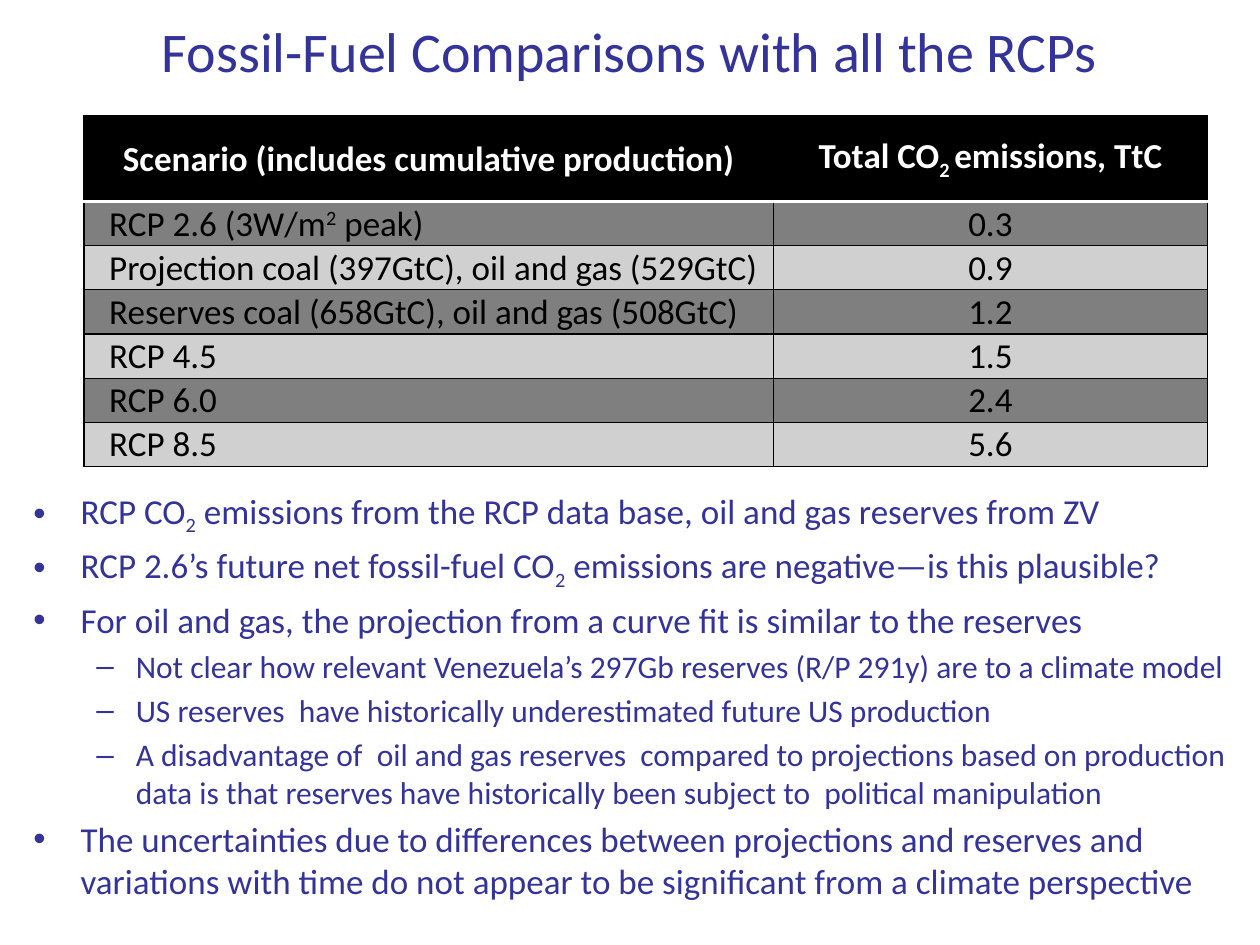
"""Builds a slide comparing fossil-fuel emissions across the RCP scenarios."""
from lxml import etree
from pptx import Presentation
from pptx.dml.color import RGBColor
from pptx.enum import text
from pptx.oxml import ns
from pptx.util import Pt

NAVY = RGBColor(0x33, 0x33, 0x99)
BLACK = RGBColor(0, 0, 0)
WHITE = RGBColor(0xFF, 0xFF, 0xFF)
DARK = RGBColor(0x7F, 0x7F, 0x7F)
LIGHT = RGBColor(0xD0, 0xD0, 0xD0)


def write(para, wording, size, color, bold=False, shift=-25):
    """Write wording into para, raising or lowering the parts between bars."""
    para.font.name, para.font.size, para.font.bold = "Calibri", Pt(size), bold
    para.font.color.rgb = color
    for index, part in enumerate(wording.split("|")):
        span = para.add_run()
        span.text = part
        if index % 2:
            span.font._element.set("baseline", str(shift * 1000))


def add_border(cell, side, color, width):
    """Draw one side of a cell."""
    line = etree.SubElement(cell._tc.get_or_add_tcPr(), ns.qn(f"a:ln{side}"), w=str(Pt(width)))
    fill = etree.SubElement(line, ns.qn("a:solidFill"))
    etree.SubElement(fill, ns.qn("a:srgbClr"), val=str(color))


deck = Presentation()
deck.slide_width, deck.slide_height = Pt(720), Pt(540)
page = deck.slides.add_slide(deck.slide_layouts[6])

title = page.shapes.add_textbox(Pt(36), Pt(9.5), Pt(648), Pt(38)).text_frame
title.word_wrap = True
title.vertical_anchor = text.MSO_ANCHOR.MIDDLE
title.paragraphs[0].alignment = text.PP_ALIGN.CENTER
write(title.paragraphs[0], "Fossil-Fuel Comparisons with all the RCPs", 32, NAVY)

scenarios = [
    ("Scenario (includes cumulative production)", "Total CO|2 |emissions, TtC"),
    ("RCP 2.6 (3W/m|2| peak)", "0.3"),
    ("Projection coal (397GtC), oil and gas (529GtC)", "0.9"),
    ("Reserves coal (658GtC), oil and gas (508GtC)", "1.2"),
    ("RCP 4.5", "1.5"),
    ("RCP 6.0", "2.4"),
    ("RCP 8.5", "5.6"),
]
header_height, row_height = 48, 25.25
table = page.shapes.add_table(
    len(scenarios), 2, Pt(48), Pt(66.25), Pt(642),
    Pt(header_height + row_height * (len(scenarios) - 1))).table
table.columns[0].width, table.columns[1].width = Pt(394), Pt(248)

for row, values in enumerate(scenarios):
    header = row == 0
    table.rows[row].height = Pt(header_height if header else row_height)
    for column, value in enumerate(values):
        cell = table.cell(row, column)
        for side in "LRTB":
            divider = (row, side) in ((0, "B"), (1, "T"))
            add_border(cell, side, WHITE if divider else BLACK, 2 if divider else 0.75)
        cell.fill.solid()
        cell.fill.fore_color.rgb = BLACK if header else DARK if row % 2 else LIGHT
        if header:
            inset = 10.8 if column else 7.2
            margins = (inset, 10.8, inset, 10.8) if column else (inset, 0.72, inset, 0)
        else:
            margins = (0.72, 0.72, 0.72, 0) if column else (14.4, 0.72, 0, 0)
        (cell.margin_left, cell.margin_top,
         cell.margin_right, cell.margin_bottom) = map(Pt, margins)
        cell.vertical_anchor = text.MSO_ANCHOR.MIDDLE if header else text.MSO_ANCHOR.BOTTOM
        para = cell.text_frame.paragraphs[0]
        centred = header or column
        para.alignment = text.PP_ALIGN.CENTER if centred else text.PP_ALIGN.LEFT
        write(para, value, 20, WHITE if header else BLACK, header, -25 if header else 30)

points = [
    (0, "RCP CO|2| emissions from the RCP data base, oil and gas reserves from ZV"),
    (0, "RCP 2.6’s future net fossil-fuel CO|2| emissions are negative—is this plausible?"),
    (0, "For oil and gas, the projection from a curve fit is similar to the reserves"),
    (1, "Not clear how relevant Venezuela’s 297Gb reserves (R/P 291y) are to a climate model"),
    (1, "US reserves  have historically underestimated future US production"),
    (1, "A disadvantage of  oil and gas reserves  compared to projections based on production "
        "data is that reserves have historically been subject to  political manipulation"),
    (0, "The uncertainties due to differences between projections and reserves and "
        "variations with time do not appear to be significant from a climate perspective"),
]
levels = [("•", 27, 20), ("–", 58.5, 18)]
hangs = [27, 22.5]

box = page.shapes.add_textbox(Pt(12), Pt(276), Pt(702), Pt(246))
box.fill.solid()
box.fill.fore_color.rgb = WHITE
body = box.text_frame
body.word_wrap = True
for index, (level, wording) in enumerate(points):
    para = body.add_paragraph() if index else body.paragraphs[0]
    bullet, indent, size = levels[level]
    props = para._p.get_or_add_pPr()
    props.set("marL", str(Pt(indent)))
    props.set("indent", str(-Pt(hangs[level])))
    etree.SubElement(props, ns.qn("a:buFont"), typeface="Arial")
    etree.SubElement(props, ns.qn("a:buChar"), char=bullet)
    para.level = level
    para.space_before = Pt(size * 0.2)
    write(para, wording, size, NAVY)

deck.save("out.pptx")
